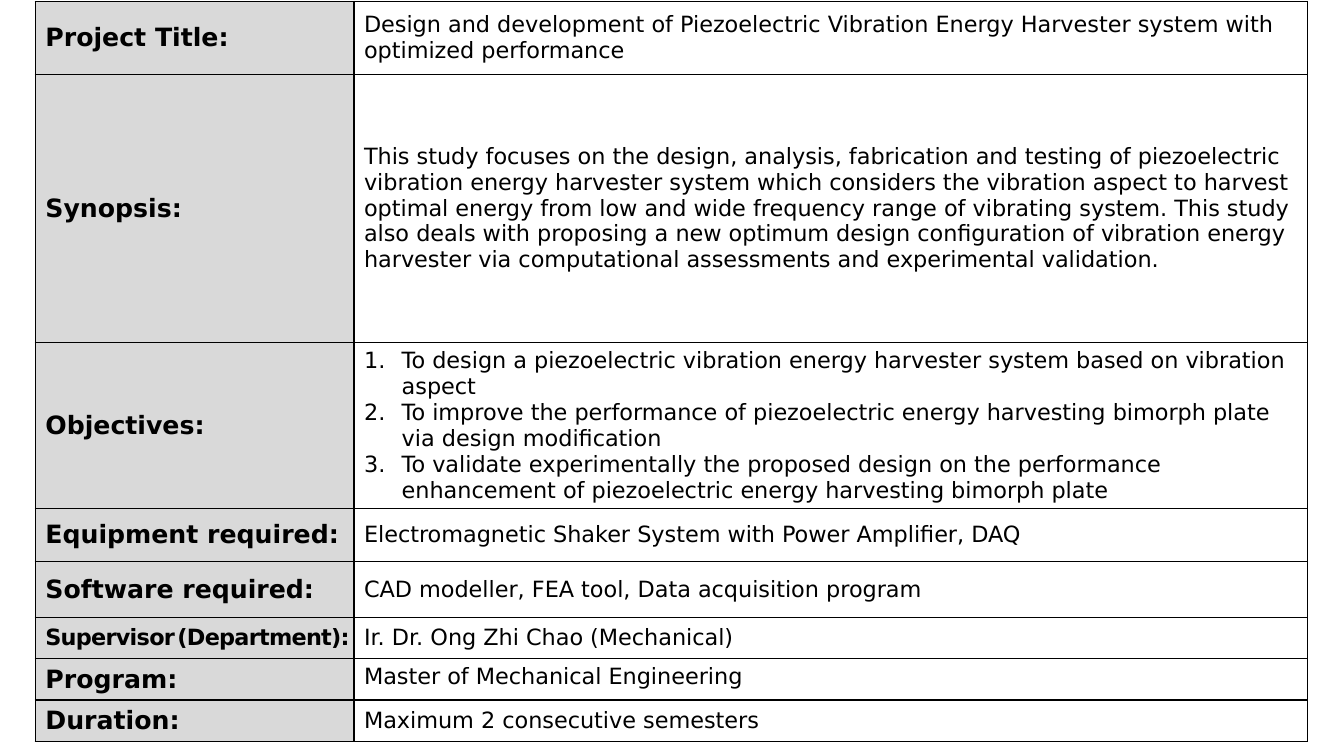
from lxml.etree import SubElement
from pptx import Presentation
from pptx.dml.color import RGBColor
from pptx.enum.text import MSO_ANCHOR
from pptx.oxml.ns import qn
from pptx.util import Cm, Pt

FONT = "DejaVu Sans"
COLORS = {"ink": "000000", "label": "D9D9D9"}
LABEL, VALUE = 18, 16
INDENT = Cm(0.95)
COLS = [8.03, 24.03]

# Height in cm, label, paragraphs of the value
ROWS = [
    (1.83, "Project Title:", ["Design and development of Piezoelectric Vibration Energy "
                              "Harvester system with optimized performance"]),
    (6.76, "Synopsis:", [
        "This study focuses on the design, analysis, fabrication and testing of "
        "piezoelectric vibration energy harvester system which considers the vibration "
        "aspect to harvest optimal energy from low and wide frequency range of vibrating "
        "system. This study also deals with proposing a new optimum design configuration "
        "of vibration energy harvester via computational assessments and experimental "
        "validation."]),
    (4.19, "Objectives:", [
        "To design a piezoelectric vibration energy harvester system based on vibration "
        "aspect",
        "To improve the performance of piezoelectric energy harvesting bimorph plate via "
        "design modification",
        "To validate experimentally the proposed design on the performance enhancement of "
        "piezoelectric energy harvesting bimorph plate"]),
    (1.32, "Equipment required:", ["Electromagnetic Shaker System with Power Amplifier, DAQ"]),
    (1.42, "Software required:", ["CAD modeller, FEA tool, Data acquisition program"]),
    (1.04, "Supervisor (Department):", ["Ir. Dr. Ong Zhi Chao (Mechanical)"]),
    (1.04, "Program:", ["Master of Mechanical Engineering"]),
    (1.04, "Duration:", ["Maximum 2 consecutive semesters"]),
]


def style(run, size, bold):
    font = run.font
    font.name, font.size, font.bold = FONT, Pt(size), bold
    font.color.rgb = RGBColor.from_string(COLORS["ink"])


def border(cell):
    props = cell._tc.get_or_add_tcPr()
    for side in ("lnL", "lnR", "lnT", "lnB"):
        line = SubElement(props, qn(f"a:{side}"), w=str(Pt(1)))
        fill = SubElement(line, qn("a:solidFill"))
        SubElement(fill, qn("a:srgbClr"), val=COLORS["ink"])


def number(para):
    props = para._p.get_or_add_pPr()
    props.set("marL", str(INDENT))
    props.set("indent", str(-INDENT))
    SubElement(props, qn("a:buFont"), typeface="+mj-lt")
    SubElement(props, qn("a:buAutoNum"), type="arabicPeriod")


def write(cell, lines, size, bold=False):
    cell.vertical_anchor = MSO_ANCHOR.MIDDLE
    border(cell)
    cell.text_frame.text = "\n".join(lines)
    for para in cell.text_frame.paragraphs:
        style(para.runs[0], size, bold)
        if len(lines) > 1:
            number(para)


def tighten(cell):
    """Fit the long supervisor label on one line."""
    cell.margin_right = 0
    para = cell.text_frame.paragraphs[0]
    words = para.text.split()
    para.clear()
    for text, size in ((words[0], VALUE), (" ", 5), (words[1], VALUE)):
        run = para.add_run()
        run.text = text
        style(run, size, True)
        run.font._element.set("spc", "-50")


def sheet(slide, left, top):
    """Project table: shaded labels beside their values."""
    heights = [row[0] for row in ROWS]
    table = slide.shapes.add_table(len(ROWS), len(COLS), Cm(left), Cm(top),
                                   Cm(sum(COLS)), Cm(sum(heights))).table
    table.first_row = table.horz_banding = False
    for col, width in zip(table.columns, COLS):
        col.width = Cm(width)
    for row, (height, label, lines) in zip(table.rows, ROWS):
        row.height = Cm(height)
        name, value = row.cells
        write(name, [label], LABEL, True)
        name.fill.solid()
        name.fill.fore_color.rgb = RGBColor.from_string(COLORS["label"])
        write(value, lines, VALUE)
        value.fill.background()
        # Two rows differ from the rest
        if label.startswith("Supervisor"):
            tighten(name)
        elif label == "Program:":
            value.vertical_anchor = MSO_ANCHOR.TOP


def main():
    deck = Presentation()
    deck.slide_width, deck.slide_height = Cm(33.87), Cm(19.05)
    slide = deck.slides.add_slide(deck.slide_layouts[6])
    sheet(slide, 0.89, 0.04)
    deck.save("out.pptx")


if __name__ == "__main__":
    main()
